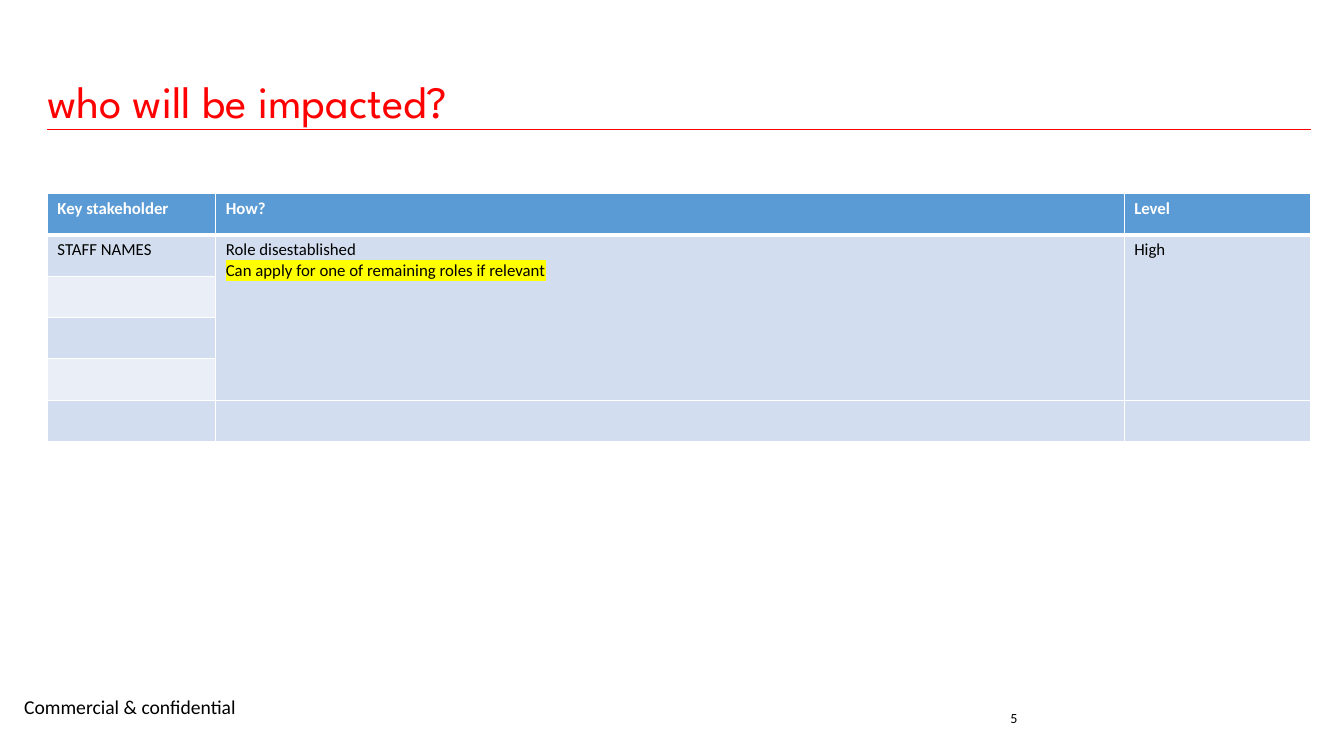
from lxml import etree
from pptx import Presentation
from pptx.dml.color import RGBColor
from pptx.enum.shapes import MSO_CONNECTOR
from pptx.enum.text import MSO_ANCHOR, MSO_AUTO_SIZE, PP_ALIGN
from pptx.oxml.ns import qn
from pptx.util import Inches, Pt

STRAIGHT = MSO_CONNECTOR.STRAIGHT
MIDDLE, TOP = MSO_ANCHOR.MIDDLE, MSO_ANCHOR.TOP
LEFT, RIGHT = PP_ALIGN.LEFT, PP_ALIGN.RIGHT
FIT_SHAPE = MSO_AUTO_SIZE.SHAPE_TO_FIT_TEXT

COLOURS = {
    "accent": "FF0000",
    "text": "000000",
    "white": "FFFFFF",
    "header": "5B9BD5",
    "band_dark": "D2DEEF",
    "band_light": "EAEFF7",
    "highlight": "FFFF00",
}
BODY_FONT = "Calibri"
TITLE_FONT = "League Spartan"

COLUMN_WIDTHS = [1.67, 9.01, 1.85]
ROW_HEIGHT = 0.41
ROW_COUNT = 6
HEADINGS = ["Key stakeholder", "How?", "Level"]
IMPACT = [
    "STAFF NAMES",
    "Role disestablished\nCan apply for one of remaining roles if relevant",
    "High",
]


def colour(name):
    return RGBColor.from_string(COLOURS[name])


def format_text(text_frame, size, colour_name, font=BODY_FONT, bold=False):
    for paragraph in text_frame.paragraphs:
        for run in paragraph.runs:
            run.font.size = Pt(size)
            run.font.name = font
            run.font.bold = bold
            run.font.color.rgb = colour(colour_name)


def add_text(slide, box, text, size, colour_name="text", font=BODY_FONT,
             wrap=False, anchor=TOP, align=LEFT):
    shape = slide.shapes.add_textbox(*map(Inches, box))
    text_frame = shape.text_frame
    text_frame.text = text
    text_frame.word_wrap = wrap
    if not wrap:
        text_frame.auto_size = FIT_SHAPE
    text_frame.vertical_anchor = anchor
    text_frame.paragraphs[0].alignment = align
    format_text(text_frame, size, colour_name, font)


def add_rule(slide, left, right, top):
    line = slide.shapes.add_connector(
        STRAIGHT, Inches(left), Inches(top), Inches(right), Inches(top))
    line.line.color.rgb = colour("accent")
    line.line.width = Pt(0.5)
    etree.SubElement(line._element.spPr, qn("a:effectLst"))


def add_solid_colour(parent, colour_name):
    fill = etree.SubElement(parent, qn("a:solidFill"))
    etree.SubElement(fill, qn("a:srgbClr"), val=COLOURS[colour_name])


def set_borders(cell, widths):
    properties = cell._tc.get_or_add_tcPr()
    for index, (side, width) in enumerate(widths.items()):
        border = etree.Element(qn(f"a:ln{side}"), w=str(Pt(width)))
        add_solid_colour(border, "white")
        properties.insert(index, border)


def highlight(run):
    mark = etree.Element(qn("a:highlight"))
    etree.SubElement(mark, qn("a:srgbClr"), val=COLOURS["highlight"])
    run._r.rPr.find(qn("a:solidFill")).addnext(mark)


def row_fill(row, column):
    if row == 0:
        return "header"
    return "band_light" if column == 0 and row % 2 == 0 else "band_dark"


def add_impact_table(slide, left, top):
    table = slide.shapes.add_table(
        ROW_COUNT, len(COLUMN_WIDTHS), Inches(left), Inches(top),
        Inches(sum(COLUMN_WIDTHS)), Inches(ROW_HEIGHT * ROW_COUNT)).table
    for column, width in zip(table.columns, COLUMN_WIDTHS):
        column.width = Inches(width)
    for row in table.rows:
        row.height = Inches(ROW_HEIGHT)

    # Fills and borders, with a thick rule below the header
    for row in range(ROW_COUNT):
        for column in range(len(COLUMN_WIDTHS)):
            cell = table.cell(row, column)
            cell.fill.solid()
            cell.fill.fore_color.rgb = colour(row_fill(row, column))
            set_borders(cell, {"L": 1, "R": 1, "T": 3 if row == 1 else 1,
                               "B": 3 if row == 0 else 1})

    # Wording
    for column, (heading, impact) in enumerate(zip(HEADINGS, IMPACT)):
        header_cell, impact_cell = table.cell(0, column), table.cell(1, column)
        header_cell.text_frame.text = heading
        format_text(header_cell.text_frame, 12, "white", bold=True)
        impact_cell.text_frame.text = impact
        format_text(impact_cell.text_frame, 12, "text")
    highlight(table.cell(1, 1).text_frame.paragraphs[1].runs[0])

    # How and level apply to the first four stakeholders
    for column in (1, 2):
        table.cell(1, column).merge(table.cell(4, column))


def main():
    presentation = Presentation()
    presentation.slide_width = Inches(13.33)
    presentation.slide_height = Inches(7.5)
    slide = presentation.slides.add_slide(presentation.slide_layouts[6])

    # Title and rule
    add_text(slide, (0.37, 0.68, 5.02, 0.64), "who will be impacted?", 32,
             "accent", TITLE_FONT)
    add_rule(slide, 0.47, 13, 1.28)

    # Stakeholders
    add_impact_table(slide, 0.47, 1.92)

    # Footer
    add_text(slide, (0.14, 6.84, 2.32, 0.34), "Commercial & confidential", 14)
    add_text(slide, (7.22, 6.92, 3, 0.4), "5 ", 10, wrap=True,
             anchor=MIDDLE, align=RIGHT)

    presentation.save("out.pptx")


if __name__ == "__main__":
    main()
